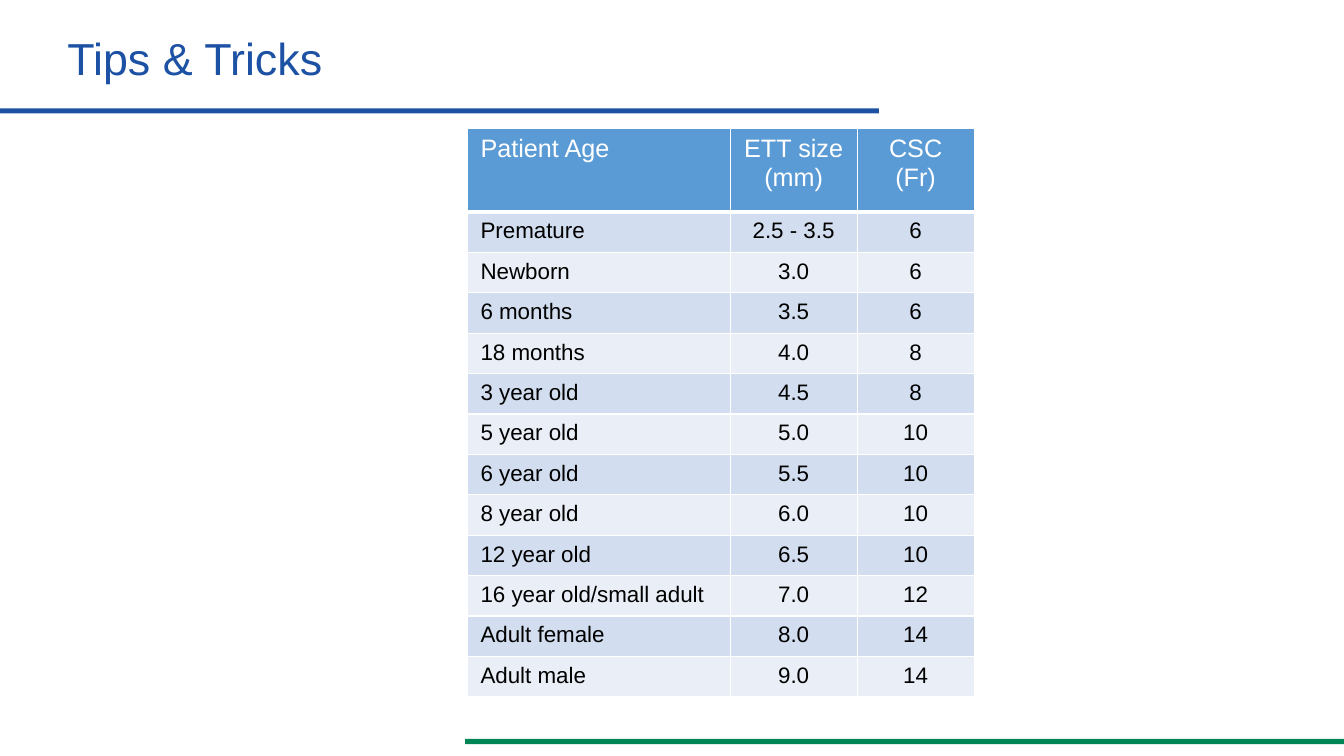
"""Build a slide with a table of tube and catheter sizes by patient age."""
import pptx
import pptx.dml.color
import pptx.enum.shapes
import pptx.enum.text
import pptx.oxml
import pptx.oxml.ns
import pptx.util
from pptx.util import Cm

RGBColor = pptx.dml.color.RGBColor
PP_ALIGN = pptx.enum.text.PP_ALIGN
MSO_ANCHOR = pptx.enum.text.MSO_ANCHOR

BLUE = RGBColor(0x1D, 0x51, 0xA4)
GREEN = RGBColor(0x00, 0x85, 0x57)
HEADER = RGBColor(0x5B, 0x9B, 0xD5)
BANDS = [RGBColor(0xEA, 0xEF, 0xF7), RGBColor(0xD2, 0xDE, 0xEF)]
WHITE = RGBColor(0xFF, 0xFF, 0xFF)
BLACK = RGBColor(0x00, 0x00, 0x00)

ROWS = [
    ("Patient Age", "ETT size (mm)", "CSC (Fr)"),
    ("Premature", "2.5 - 3.5", "6"),
    ("Newborn", "3.0", "6"),
    ("6 months", "3.5", "6"),
    ("18 months", "4.0", "8"),
    ("3 year old", "4.5", "8"),
    ("5 year old", "5.0", "10"),
    ("6 year old", "5.5", "10"),
    ("8 year old", "6.0", "10"),
    ("12 year old", "6.5", "10"),
    ("16 year old/small adult", "7.0", "12"),
    ("Adult female", "8.0", "14"),
    ("Adult male", "9.0", "14"),
]
COL_WIDTHS = [6.62, 3.2, 2.95]
ROW_HEIGHTS = [2.11] + [0.98] * 9 + [1.02] + [0.98] * 2


def write_text(tf, text, *, size, color, align=PP_ALIGN.LEFT, spacing=1.0):
    tf.word_wrap = True
    p = tf.paragraphs[0]
    p.alignment = align
    p.line_spacing = spacing
    r = p.add_run()
    r.text = text
    r.font.name = "Arial"
    r.font.size = pptx.util.Pt(size)
    r.font.bold = False
    r.font.color.rgb = color


prs = pptx.Presentation()
prs.slide_width = Cm(33.87)
prs.slide_height = Cm(19.05)
slide = prs.slides.add_slide(prs.slide_layouts[6])

for left, top, color in [(0, 2.73, BLUE), (11.72, 18.62, GREEN)]:
    sp = slide.shapes.add_shape(pptx.enum.shapes.MSO_SHAPE.RECTANGLE,
                                Cm(left), Cm(top), Cm(22.15), Cm(0.13))
    sp.shadow.inherit = False
    sp.fill.solid()
    sp.fill.fore_color.rgb = color
    sp.line.fill.background()

tf = slide.shapes.add_textbox(Cm(1.45), Cm(0.79), Cm(29.21), Cm(1.5)).text_frame
tf.vertical_anchor = MSO_ANCHOR.MIDDLE
write_text(tf, "Tips & Tricks", size=32, color=BLUE, spacing=0.9)

table = slide.shapes.add_table(len(ROWS), len(COL_WIDTHS), Cm(11.78), Cm(3.23),
                               Cm(sum(COL_WIDTHS)), Cm(sum(ROW_HEIGHTS))).table
for col, width in zip(table.columns, COL_WIDTHS):
    col.width = Cm(width)

for i, (values, height) in enumerate(zip(ROWS, ROW_HEIGHTS)):
    table.rows[i].height = Cm(height)
    is_header = i == 0
    for j, value in enumerate(values):
        cell = table.cell(i, j)
        cell.margin_left = cell.margin_right = Cm(0.33)
        cell.margin_top = cell.margin_bottom = Cm(0.17)
        cell.vertical_anchor = MSO_ANCHOR.TOP
        tcPr = cell._tc.get_or_add_tcPr()
        for side in "LRTB":
            points = 3 if is_header and side == "B" else 1
            tcPr.append(pptx.oxml.parse_xml(
                f'<a:ln{side} {pptx.oxml.ns.nsdecls("a")} w="{pptx.util.Pt(points)}">'
                f'<a:solidFill><a:srgbClr val="{WHITE}"/></a:solidFill></a:ln{side}>'))
        cell.fill.solid()
        cell.fill.fore_color.rgb = HEADER if is_header else BANDS[i % 2]
        write_text(cell.text_frame, value, size=18 if is_header else 16,
                   color=WHITE if is_header else BLACK,
                   align=PP_ALIGN.CENTER if j else PP_ALIGN.LEFT)

prs.save("out.pptx")
